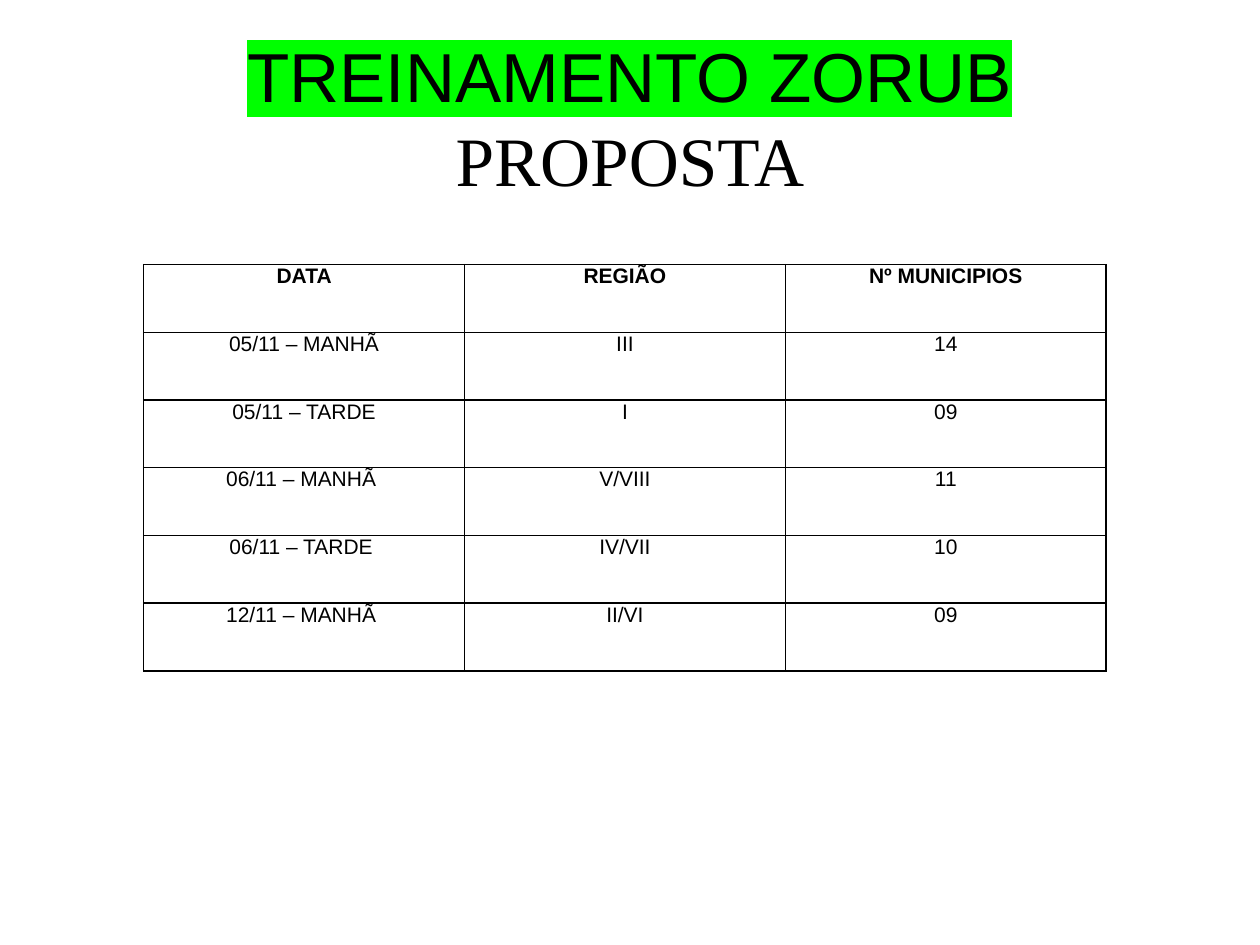
from lxml import etree
from pptx import Presentation
from pptx.dml.color import RGBColor
from pptx.enum.text import MSO_ANCHOR, PP_ALIGN
from pptx.oxml.ns import qn
from pptx.util import Inches, Pt

CENTER = PP_ALIGN.CENTER
MIDDLE = MSO_ANCHOR.MIDDLE
TOP = MSO_ANCHOR.TOP

BLACK = RGBColor(0x00, 0x00, 0x00)
GREEN = RGBColor(0x00, 0xFF, 0x00)

SLIDE_WIDTH, SLIDE_HEIGHT = Inches(10), Inches(7.5)
BLANK_LAYOUT = 6

TITLE_LINES = [("TREINAMENTO ZORUB", "Arial", GREEN),
               ("PROPOSTA", "Times New Roman", None)]
SCHEDULE = [
    ("DATA", "REGIÃO", "Nº MUNICIPIOS"),
    ("05/11 – MANHÃ", "III", "14"),
    ("05/11 – TARDE", "I", "09"),
    ("06/11 – MANHÃ ", "V/VIII", "11"),
    ("06/11 – TARDE ", "IV/VII", "10"),
    ("12/11 – MANHÃ ", "II/VI", "09"),
]


def apply(target, values):
    for attribute, value in values.items():
        setattr(target, attribute, value)


def add_color(parent, color):
    etree.SubElement(parent, qn("a:srgbClr"), val=str(color))


class SlideBuilder:
    title_size = Pt(39.6)
    title_leading = Pt(48)
    table_size = Pt(12)
    table_font = "Arial"
    border_width = Pt(1)
    cell_format = {"margin_left": Inches(0.07), "margin_right": Inches(0.07),
                   "margin_top": 0, "margin_bottom": 0, "vertical_anchor": TOP}

    def __init__(self, slide):
        self.slide = slide

    def box(self, left, top, width, height):
        """Turn shares of the slide's size into lengths."""
        return (round(left * SLIDE_WIDTH), round(top * SLIDE_HEIGHT),
                round(width * SLIDE_WIDTH), round(height * SLIDE_HEIGHT))

    def style_run(self, run, font, size, bold=False):
        apply(run.font, {"name": font, "size": size, "bold": bold})
        run.font.color.rgb = BLACK

    def highlight(self, run, color):
        mark = etree.Element(qn("a:highlight"))
        add_color(mark, color)
        run.font.fill._xPr.find(qn("a:solidFill")).addnext(mark)

    def title(self, lines, *shares):
        frame = self.slide.shapes.add_textbox(*self.box(*shares)).text_frame
        apply(frame, {"word_wrap": True, "vertical_anchor": MIDDLE})
        paragraph = frame.paragraphs[0]
        apply(paragraph, {"alignment": CENTER, "line_spacing": self.title_leading})
        for index, (wording, font, marker) in enumerate(lines):
            if index:
                paragraph.add_line_break()
            run = paragraph.add_run()
            run.text = wording
            self.style_run(run, font, self.title_size)
            if marker is not None:
                self.highlight(run, marker)

    def border(self, cell):
        properties = cell._tc.get_or_add_tcPr()
        for position, side in enumerate(("a:lnL", "a:lnR", "a:lnT", "a:lnB")):
            line = etree.Element(qn(side), w=str(self.border_width))
            add_color(etree.SubElement(line, qn("a:solidFill")), BLACK)
            properties.insert(position, line)

    def cell(self, cell, wording, bold):
        apply(cell, self.cell_format)
        cell.fill.background()
        self.border(cell)
        paragraph = cell.text_frame.paragraphs[0]
        paragraph.alignment = CENTER
        run = paragraph.add_run()
        run.text = wording
        self.style_run(run, self.table_font, self.table_size, bold)

    def table(self, rows, *shares):
        table = self.slide.shapes.add_table(
            len(rows), len(rows[0]), *self.box(*shares)).table
        apply(table, {"first_row": False, "horz_banding": False})
        for row, wordings in enumerate(rows):
            for column, wording in enumerate(wordings):
                self.cell(table.cell(row, column), wording, bold=row == 0)


def main():
    presentation = Presentation()
    apply(presentation, {"slide_width": SLIDE_WIDTH, "slide_height": SLIDE_HEIGHT})
    layout = presentation.slide_layouts[BLANK_LAYOUT]
    builder = SlideBuilder(presentation.slides.add_slide(layout))
    builder.title(TITLE_LINES, 0.05, 0.04, 0.9, 1 / 6)
    builder.table(SCHEDULE, 0.114, 0.28, 0.764, 0.43)
    presentation.save("out.pptx")


if __name__ == "__main__":
    main()
